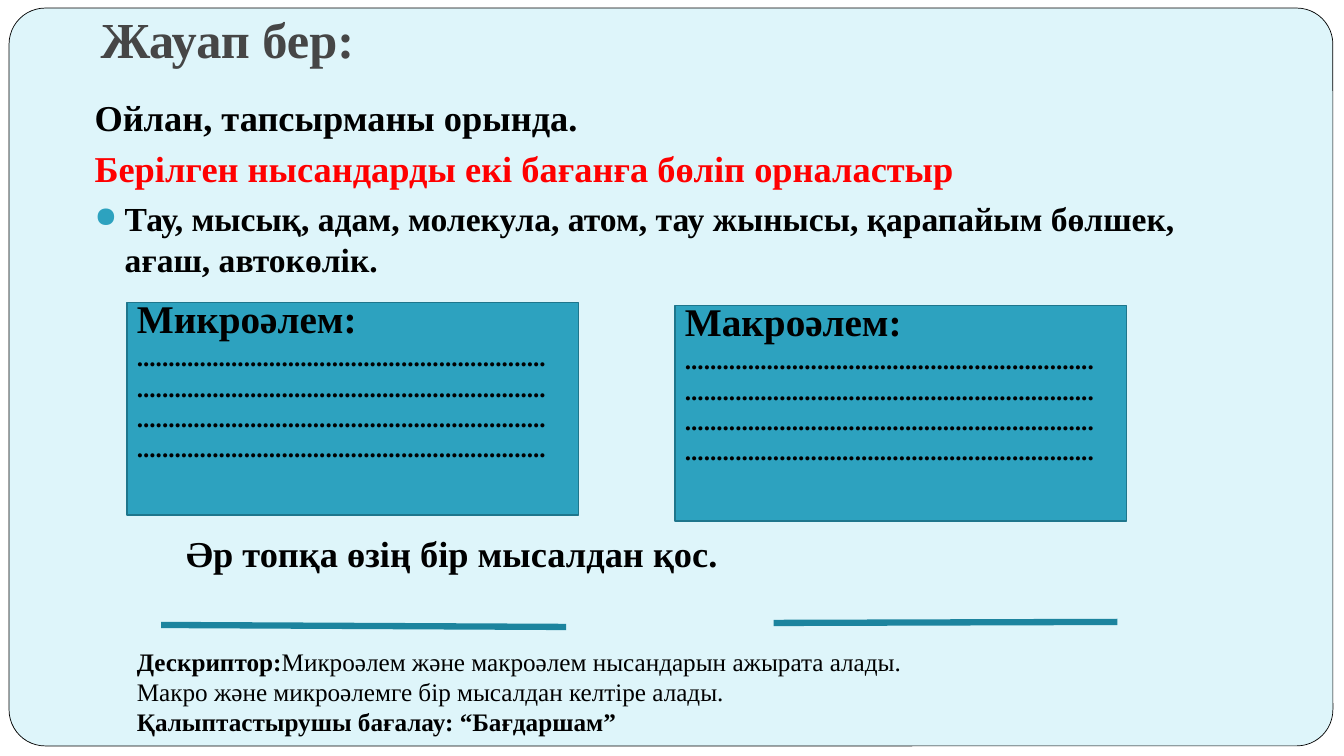
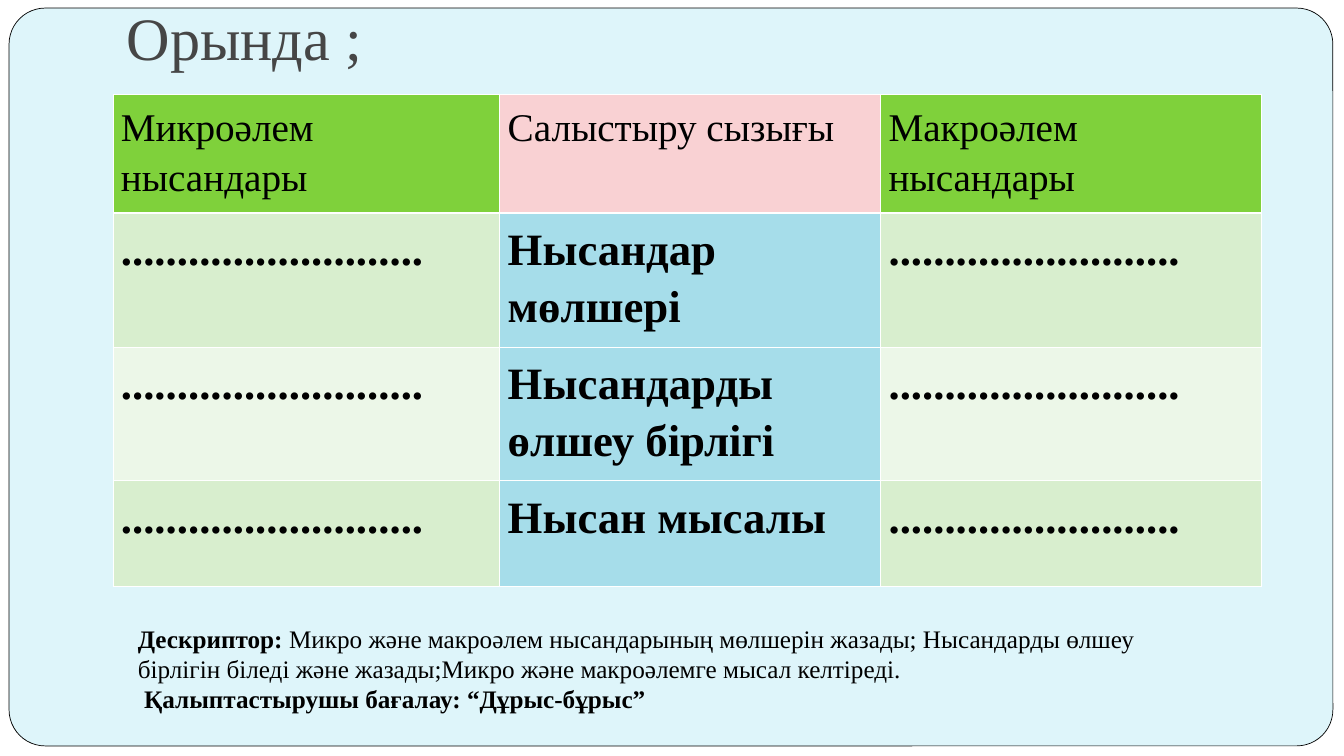
from lxml.etree import SubElement
from pptx import Presentation
from pptx.dml.color import RGBColor as RGB
from pptx.enum.shapes import MSO_CONNECTOR as CONN, MSO_SHAPE as SHAPE
from pptx.enum.text import MSO_ANCHOR as ANCHOR
from pptx.oxml import parse_xml
from pptx.oxml.ns import nsdecls, qn
from pptx.util import Inches, Pt

FONT = "Times New Roman"
COLORS = {
    "white": "FFFFFF", "card": "DEF5FA", "text": "000000", "title": "464646",
    "red": "FF0000", "teal": "2DA2BF", "teal_edge": "1E768C", "rule": "1C849E",
    "green": "7FD13B", "pink": "F9D1D3", "sky": "A6DDEA",
    "mint": "D8EECE", "pale": "ECF7E8",
}


def color(name):
    return RGB.from_string(COLORS[name])


def box_of(*lengths):
    return [Inches(v) for v in lengths]


# Text
def add_runs(p, runs, size, bold=False, ink="text", **fmt):
    """Fill a paragraph; runs is a string or a list of (text, bold) pairs."""
    for name, value in fmt.items():
        setattr(p, name, value)
    for text, weight in [(runs, bold)] if isinstance(runs, str) else runs:
        r = p.add_run()
        r.text = text
        r.font.color.rgb = color(ink)
        style = {"name": FONT, "size": Pt(size), "bold": weight}
        for name, value in style.items():
            setattr(r.font, name, value)


def add_paragraphs(tf, paragraphs):
    for i, fmt in enumerate(paragraphs):
        p = tf.add_paragraph() if i else tf.paragraphs[0]
        if fmt.pop("bullet", False):
            add_bullet(p)
        add_runs(p, **fmt)


def add_bullet(p):
    pPr = p._p.get_or_add_pPr()
    pPr.set("marL", str(Inches(0.3)))
    pPr.set("indent", str(Inches(-0.3)))
    clr = SubElement(pPr, qn("a:buClr"))
    SubElement(clr, qn("a:srgbClr"), val=COLORS["teal"])
    SubElement(pPr, qn("a:buSzPct"), val="85000")
    SubElement(pPr, qn("a:buChar"), char="●")


def add_text(s, at, paragraphs, **frame):
    tf = s.shapes.add_textbox(*box_of(*at)).text_frame
    tf.word_wrap = True
    for name, value in frame.items():
        setattr(tf, name, value)
    add_paragraphs(tf, paragraphs)


# Shapes and lines
def add_panel(s, kind, at, fill, line, width):
    sp = s.shapes.add_shape(kind, *box_of(*at))
    sp.shadow.inherit = False
    sp.fill.solid()
    sp.fill.fore_color.rgb = color(fill)
    sp.line.color.rgb = color(line)
    sp.line.width = Pt(width)
    return sp


def add_answer_box(s, at, heading):
    sp = add_panel(s, SHAPE.FLOWCHART_PROCESS, at, "teal", "teal_edge", 1)
    tf = sp.text_frame
    tf.word_wrap = True
    tf.vertical_anchor = ANCHOR.TOP
    tf.margin_top = 0
    left = {"alignment": 1}
    title = dict(runs=heading, size=28, bold=True, line_spacing=Pt(28), **left)
    blanks = [dict(runs="." * 65, size=18, bold=True, **left) for _ in range(4)]
    add_paragraphs(tf, [title, *blanks])


def add_rule(s, x1, y1, x2, y2):
    line = s.shapes.add_connector(CONN.STRAIGHT, *box_of(x1, y1, x2, y2))
    line.line.color.rgb = color("rule")
    line.line.width = Pt(4.5)
    SubElement(line._element.spPr, qn("a:effectLst"))


# Table
def set_borders(cell, widths):
    tcPr = cell._tc.get_or_add_tcPr()
    for i, (side, width) in enumerate(widths.items()):
        tcPr.insert(i, parse_xml(
            f'<a:ln{side} {nsdecls("a")} w="{Pt(width)}"><a:solidFill>'
            f'<a:srgbClr val="{COLORS["white"]}"/></a:solidFill></a:ln{side}>'))


def add_comparison(s, at, col_widths, row_heights, rows, fills):
    frame = s.shapes.add_table(len(rows), len(col_widths), *box_of(*at))
    table = frame.table
    for col, width in zip(table.columns, col_widths):
        col.width = Inches(width)
    for row, height in zip(table.rows, row_heights):
        row.height = Inches(height)
    for r, texts in enumerate(rows):
        for c, text in enumerate(texts):
            cell = table.cell(r, c)
            cell.margin_left = cell.margin_right = Inches(0.08)
            cell.fill.solid()
            cell.fill.fore_color.rgb = color(fills[r][c])
            set_borders(cell, {"L": 0.45, "R": 0.45,
                               "T": 1.47 if r == 1 else 0.45,
                               "B": 1.47 if r == 0 else 0.45})
            add_runs(cell.text_frame.paragraphs[0], text,
                     32 if r else 28, bold=r > 0, line_spacing=1.15)


# Shared slide frame
def add_slide(prs, title, at, size, bold=False):
    s = prs.slides.add_slide(prs.slide_layouts[6])
    s.background.fill.solid()
    s.background.fill.fore_color.rgb = color("white")
    card = add_panel(s, SHAPE.ROUNDED_RECTANGLE, (0.09, 0.08, 13.14, 7.32),
                     "card", "text", 0.5)
    card.adjustments[0] = 0.049
    add_text(s, at, [dict(runs=title, size=size, bold=bold, ink="title")],
             vertical_anchor=ANCHOR.BOTTOM, margin_bottom=Inches(0.1))
    return s


def add_descriptor(s, at, paragraphs):
    add_text(s, at, [dict(runs=runs, size=18) for runs in paragraphs])


def build_sorting_slide(prs):
    s = add_slide(prs, "Жауап бер:", (0.9, 0.22, 11.33, 0.56), 36, bold=True)
    gap = {"bold": True, "space_before": Pt(5.8)}
    add_text(s, (0.84, 0.89, 11.33, 2), [
        dict(runs="Ойлан, тапсырманы орында.", size=26, bold=True),
        dict(runs="Берілген нысандарды екі бағанға бөліп орналастыр",
             size=26, ink="red", **gap),
        dict(runs="Тау, мысық, адам, молекула, атом, тау жынысы, "
                  "қарапайым бөлшек, ағаш, автокөлік.",
             size=24, bullet=True, **gap),
    ])
    add_answer_box(s, (1.26, 3, 4.48, 2.11), "Микроәлем:")
    add_answer_box(s, (6.7, 3.03, 4.48, 2.14), "Макроәлем:")
    add_text(s, (1.75, 5.22, 7.8, 0.54), [
        dict(runs="Әр топқа өзің бір мысалдан қос.", size=26, bold=True)])
    add_rule(s, 1.6, 6.2, 5.62, 6.22)
    add_rule(s, 7.68, 6.18, 11.09, 6.17)
    add_descriptor(s, (1.26, 6.36, 9.36, 1), [
        [("Дескриптор:", True),
         ("Микроәлем және макроәлем нысандарын ажырата алады.", False)],
        "Макро және микроәлемге бір мысалдан келтіре алады.",
        [("Қалыптастырушы бағалау: “Бағдаршам”", True)],
    ])


def build_comparison_slide(prs):
    s = add_slide(prs, "Орында ;", (1.16, 0.3, 11.33, 0.52), 43)
    features = ["Нысандар мөлшері", "Нысандарды өлшеу бірлігі", "Нысан мысалы"]
    rows = [["Микроәлем нысандары", "Салыстыру сызығы", "Макроәлем нысандары"]]
    rows += [["." * 27, feature, "." * 26] for feature in features]
    fills = [["green", "pink", "green"]]
    fills += [[band, "sky", band] for band in ("mint", "pale", "mint")]
    add_comparison(s, (1.12, 0.94, 11.4, 4.8), [3.84, 3.78, 3.78],
                   [1.15, 1.3, 1.3, 1.05], rows, fills)
    add_descriptor(s, (1.27, 6.13, 10.31, 1), [
        [("Дескриптор:", True),
         (" Микро және макроәлем нысандарының мөлшерін жазады; "
          "Нысандарды өлшеу бірлігін біледі және жазады;"
          "Микро және макроәлемге мысал келтіреді.", False)],
        [(" Қалыптастырушы бағалау: “Дұрыс-бұрыс”", True)],
    ])


def main():
    prs = Presentation()
    prs.slide_width, prs.slide_height = box_of(13.34, 7.5)
    build_sorting_slide(prs)
    build_comparison_slide(prs)
    prs.save("out.pptx")


if __name__ == "__main__":
    main()
